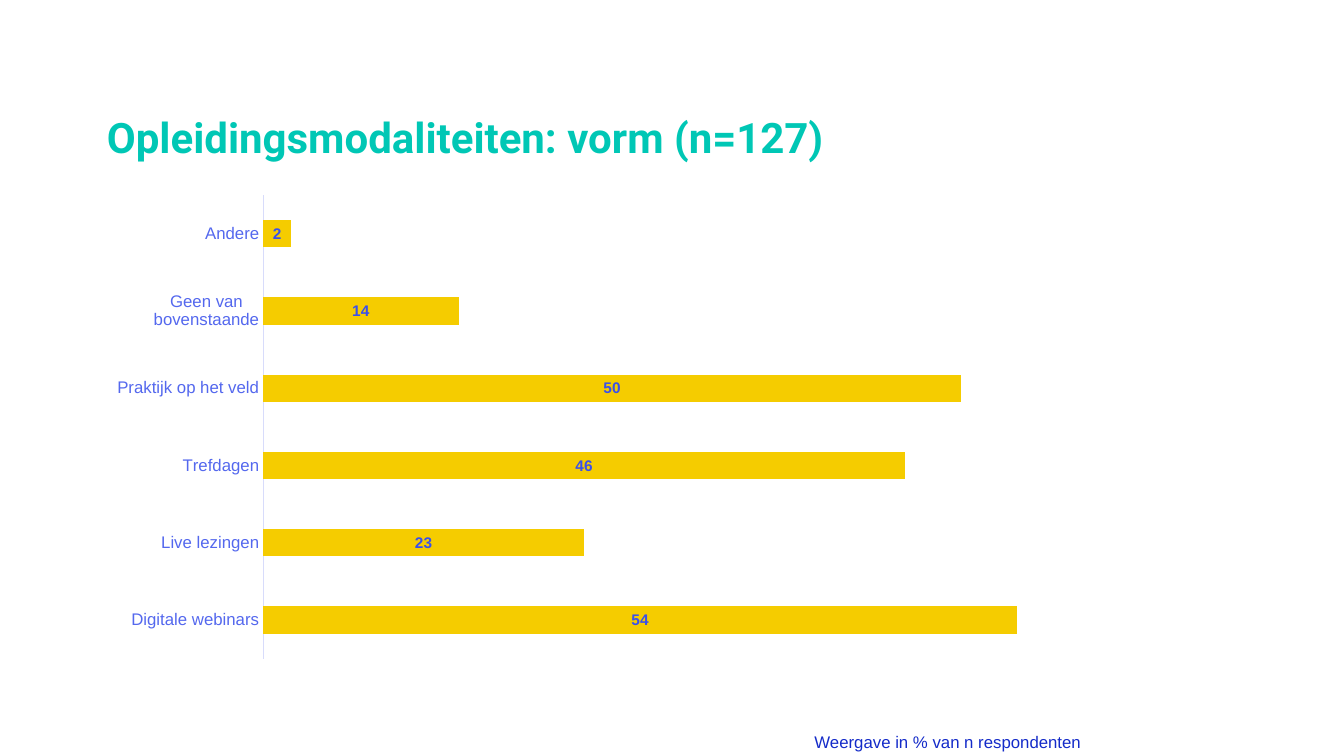
from dataclasses import dataclass

from pptx import Presentation
from pptx.chart.data import CategoryChartData
from pptx.dml.color import RGBColor
from pptx.enum.chart import XL_CHART_TYPE, XL_LABEL_POSITION, XL_TICK_LABEL_POSITION, XL_TICK_MARK
from pptx.enum.text import MSO_ANCHOR, MSO_AUTO_SIZE, PP_ALIGN
from pptx.util import Inches, Pt


@dataclass(frozen=True)
class Theme:
    """Colours, fonts and type sizes of the slide."""
    teal: str = "00C7B5"
    navy: str = "142BC9"
    axis_text: str = "5468EE"
    axis_line: str = "D8DCFB"
    label: str = "3A50EB"
    bar: str = "F5CC00"
    heading_font: str = "Roboto"
    body_font: str = "Arial"
    title_size: int = 30
    body_size: int = 12
    label_size: int = 11
    chart_size: int = 10


THEME = Theme()
SHARES = {
    "Digitale webinars": 54,
    "Live lezingen": 23,
    "Trefdagen": 46,
    "Praktijk op het veld": 50,
    "Geen van bovenstaande": 14,
    "Andere": 2,
}


def style_font(font, size, color, name=THEME.body_font, bold=False):
    """Apply size, colour, typeface and weight to a font."""
    font.size = Pt(size)
    font.color.rgb = RGBColor.from_string(color)
    font.name = name
    font.bold = bold


def write_text(frame, text, *, anchor=MSO_ANCHOR.TOP, wrap=True,
               auto_size=MSO_AUTO_SIZE.NONE, spacing=None, **font_format):
    """Fill a text frame with one formatted, left-aligned paragraph."""
    frame.word_wrap = wrap
    frame.auto_size = auto_size
    frame.vertical_anchor = anchor
    paragraph = frame.paragraphs[0]
    paragraph.alignment = PP_ALIGN.LEFT
    paragraph.line_spacing = spacing
    run = paragraph.add_run()
    run.text = text
    style_font(run.font, **font_format)


def add_title(slide, left, top, width, height):
    """Place the heading in the title placeholder."""
    heading = slide.shapes.title
    heading.left, heading.top = Inches(left), Inches(top)
    heading.width, heading.height = Inches(width), Inches(height)
    write_text(heading.text_frame, "Opleidingsmodaliteiten: vorm (n=127)",
               anchor=MSO_ANCHOR.BOTTOM, spacing=0.9, size=THEME.title_size,
               color=THEME.teal, name=THEME.heading_font, bold=True)


def add_shares_chart(slide, left, top, width, height):
    """Draw the share of respondents per training form as bars."""
    shares = CategoryChartData(number_format="0")
    shares.categories = list(SHARES)
    shares.add_series("Series 1", list(SHARES.values()))
    chart = slide.shapes.add_chart(
        XL_CHART_TYPE.BAR_CLUSTERED, Inches(left), Inches(top),
        Inches(width), Inches(height), shares).chart
    chart.has_legend = False
    chart.has_title = False
    style_font(chart.font, THEME.chart_size, THEME.navy)

    forms = chart.category_axis
    forms.major_tick_mark = forms.minor_tick_mark = XL_TICK_MARK.NONE
    forms.tick_label_position = XL_TICK_LABEL_POSITION.NEXT_TO_AXIS
    forms.has_major_gridlines = False
    forms.format.line.color.rgb = RGBColor.from_string(THEME.axis_line)
    forms.format.line.width = Pt(0.75)
    style_font(forms.tick_labels.font, THEME.body_size, THEME.axis_text)

    percent = chart.value_axis
    percent.visible = False
    percent.has_major_gridlines = False
    percent.minimum_scale, percent.maximum_scale = 0, 60

    plot = chart.plots[0]
    plot.gap_width = 182
    plot.vary_by_categories = False
    bars = plot.series[0]
    bars.format.fill.solid()
    bars.format.fill.fore_color.rgb = RGBColor.from_string(THEME.bar)
    labels = bars.data_labels
    labels.show_value = True
    labels.position = XL_LABEL_POSITION.CENTER
    labels.number_format = "0"
    labels.number_format_is_linked = False
    style_font(labels.font, THEME.label_size, THEME.label, bold=True)


def add_footnote(slide, left, top, width, height):
    """Explain the unit of the values."""
    note = slide.shapes.add_textbox(Inches(left), Inches(top), Inches(width), Inches(height))
    write_text(note.text_frame, "Weergave in % van n respondenten", wrap=False,
               auto_size=MSO_AUTO_SIZE.SHAPE_TO_FIT_TEXT,
               size=THEME.body_size, color=THEME.navy)


def main():
    """Build and save the slide."""
    deck = Presentation()
    deck.slide_width, deck.slide_height = Inches(13.33), Inches(7.5)
    slide = deck.slides.add_slide(deck.slide_layouts[5])
    margin, content_width = 0.96, 10.16
    add_title(slide, margin, 0.58, content_width, 1.08)
    add_shares_chart(slide, margin, 1.84, content_width, 4.79)
    add_footnote(slide, 7.98, 7.21, 2.87, 0.3)
    deck.save("out.pptx")


if __name__ == "__main__":
    main()
